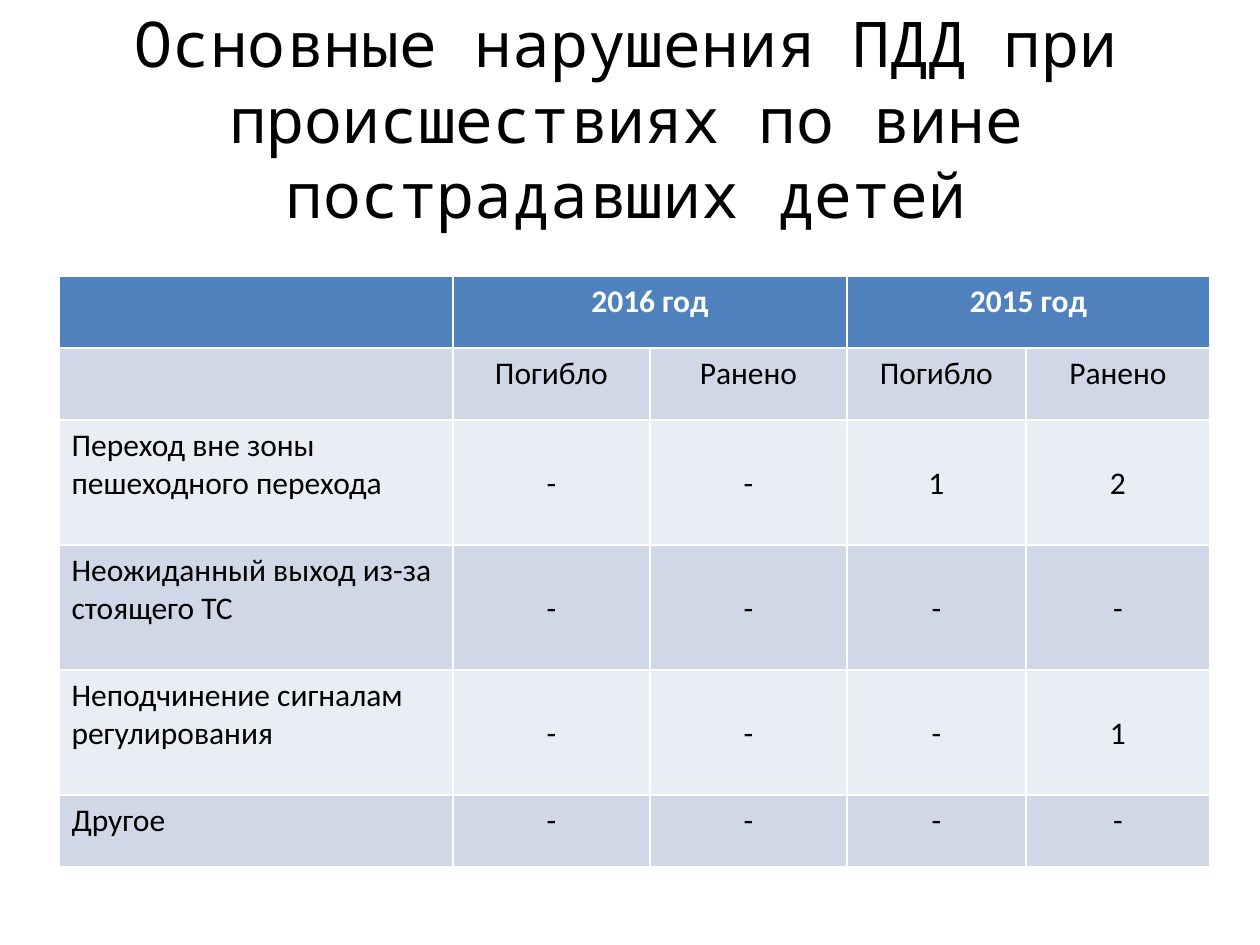
from pptx import Presentation
from pptx.dml.color import RGBColor
from pptx.enum.text import MSO_ANCHOR, MSO_AUTO_SIZE, PP_ALIGN
from pptx.util import Emu, Pt

BLACK = RGBColor(0x00, 0x00, 0x00)
WHITE = RGBColor(0xFF, 0xFF, 0xFF)
BLUE = RGBColor(0x4F, 0x81, 0xBD)
BAND_DARK = RGBColor(0xD0, 0xD8, 0xE8)
BAND_LIGHT = RGBColor(0xE9, 0xED, 0xF4)

COL_WIDTHS = [394, 197, 197, 179, 184]
ROW_HEIGHTS = [72, 72, 125, 125, 125, 72]
ROWS = [
    ["", "2016 год", "", "2015 год", ""],
    ["", "Погибло", "Ранено", "Погибло", "Ранено"],
    ["Переход вне зоны пешеходного перехода", "-", "-", "1", "2"],
    ["Неожиданный выход из-за стоящего ТС", "-", "-", "-", "-"],
    ["Неподчинение сигналам регулирования", "-", "-", "-", "1"],
    ["Другое", "-", "-", "-", "-"],
]
TALL_ROWS = range(2, 5)


def px(n):
    return Emu(round(n * 914400 / 126))


prs = Presentation()
prs.slide_width, prs.slide_height = px(1260), px(945)
s = prs.slides.add_slide(prs.slide_layouts[5])

title = s.shapes.title
title.left, title.top, title.width, title.height = px(59), px(39), px(1134), px(158)
tf = title.text_frame
tf.text = "Основные нарушения ПДД при происшествиях по вине пострадавших детей"
tf.word_wrap = True
tf.auto_size = MSO_AUTO_SIZE.NONE
tf.vertical_anchor = MSO_ANCHOR.MIDDLE
p = tf.paragraphs[0]
p.alignment = PP_ALIGN.CENTER
p.font.name = "Noto Sans Mono"
p.font.size = Pt(36)
p.font.color.rgb = BLACK

table = s.shapes.add_table(
    len(ROWS), len(COL_WIDTHS), px(59), px(276), px(sum(COL_WIDTHS)), px(sum(ROW_HEIGHTS))
).table
for column, width in zip(table.columns, COL_WIDTHS):
    column.width = px(width)
for row, height in zip(table.rows, ROW_HEIGHTS):
    row.height = px(height)

for i, texts in enumerate(ROWS):
    header = i == 0
    band = BAND_DARK if i % 2 else BAND_LIGHT
    for j, text in enumerate(texts):
        cell = table.cell(i, j)
        cell.fill.solid()
        cell.fill.fore_color.rgb = BLUE if header else band
        cell.text = text
        p = cell.text_frame.paragraphs[0]
        p.alignment = PP_ALIGN.CENTER if j else PP_ALIGN.LEFT
        p.font.name = "Calibri"
        p.font.size = Pt(18)
        p.font.bold = header
        p.font.color.rgb = WHITE if header else BLACK
        if j and i in TALL_ROWS:
            cell.margin_top = px(45)

for j in (1, 3):
    table.cell(0, j).merge(table.cell(0, j + 1))

prs.save("out.pptx")
